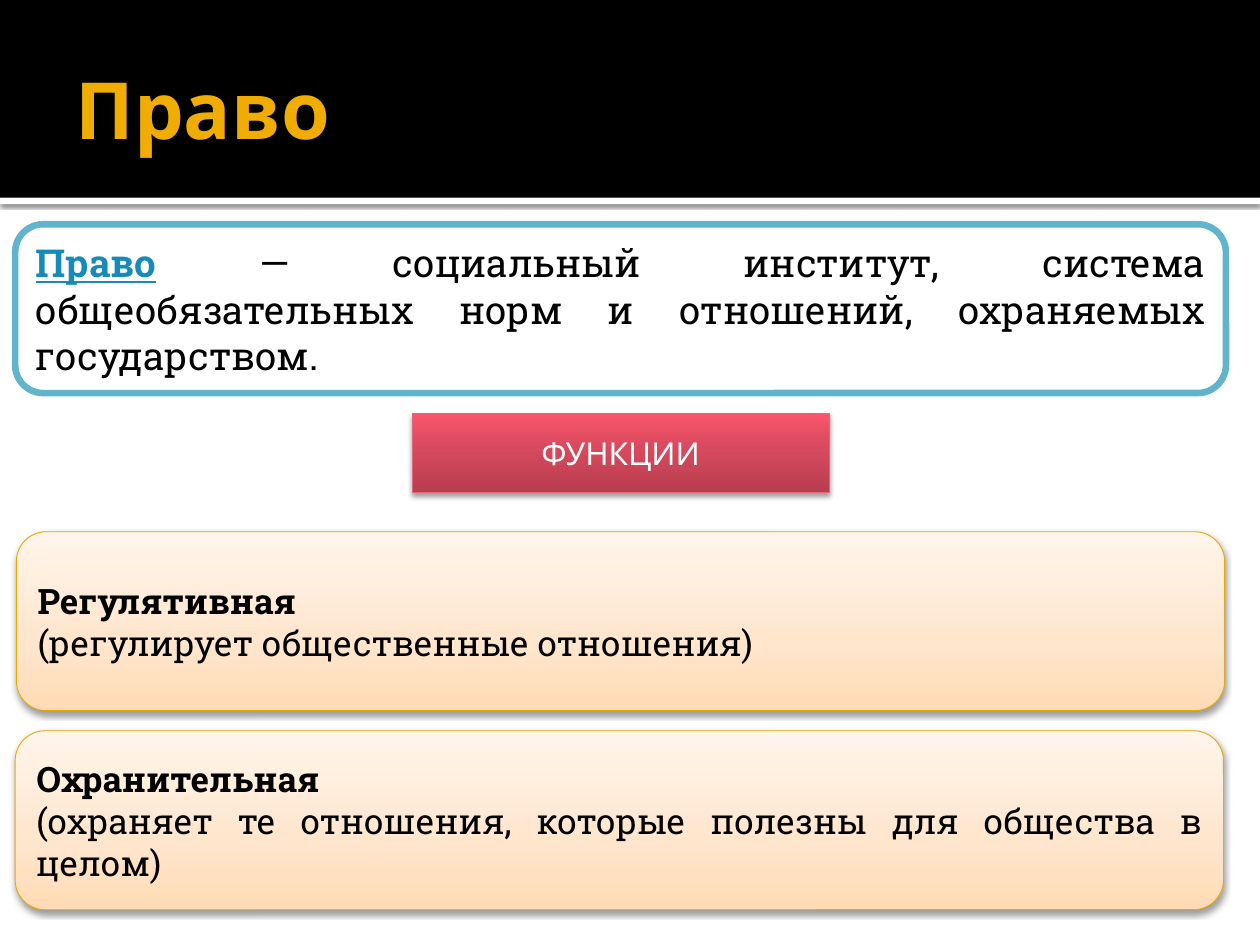
from dataclasses import dataclass

from lxml import etree
from pptx import Presentation
from pptx.dml.color import RGBColor
from pptx.enum.shapes import MSO_SHAPE
from pptx.enum.text import MSO_ANCHOR, MSO_AUTO_SIZE, PP_ALIGN
from pptx.oxml.ns import qn
from pptx.util import Inches, Pt

RECT, ROUNDED = MSO_SHAPE.RECTANGLE, MSO_SHAPE.ROUNDED_RECTANGLE
LEFT, CENTER, JUSTIFY = PP_ALIGN.LEFT, PP_ALIGN.CENTER, PP_ALIGN.JUSTIFY
MIDDLE, NO_FIT = MSO_ANCHOR.MIDDLE, MSO_AUTO_SIZE.NONE
TITLE_ONLY = 5


@dataclass(frozen=True)
class Theme:
    heading: str = "Cabin"
    body: str = "Roboto Slab"
    title_size: float = 45
    definition_size: float = 22
    card_size: float = 20
    label_size: float = 18
    black: str = "000000"
    white: str = "FFFFFF"
    gold: str = "F0AD00"
    term: str = "168BBA"
    frame: str = "60B5CC"
    label_line: str = "E46778"
    card_line: str = "EBA900"
    # Gradient stops run from the bottom edge to the top
    label_fill: tuple = ((0, "B73E4F"), (55, "D7495D"), (100, "FA556C"))
    card_fill: tuple = ((0, "FFDBB5"), (35, "FFE5CB"), (100, "FFF5EB"))


T = Theme()


def set_gradient(sp, stops):
    sp.fill.gradient()
    sp.fill.gradient_angle = 90
    gs_list = sp.element.spPr.find(".//" + qn("a:gsLst"))
    for old in list(gs_list):
        gs_list.remove(old)
    for pos, color in stops:
        gs = etree.SubElement(gs_list, qn("a:gs"), pos=str(pos * 1000))
        etree.SubElement(gs, qn("a:srgbClr"), val=color)


def add_shadow(sp, alpha, blur, dist):
    effects = sp.element.spPr.find(qn("a:effectLst"))
    shadow = etree.SubElement(
        effects, qn("a:outerShdw"), blurRad=str(Pt(blur)), dist=str(Pt(dist)),
        dir="5400000", algn="ctr", rotWithShape="0")
    color = etree.SubElement(shadow, qn("a:srgbClr"), val=T.black)
    etree.SubElement(color, qn("a:alpha"), val=str(alpha * 1000))


def add_box(s, kind, box, fill, line=None, width=0.5, shadow=None):
    sp = s.shapes.add_shape(kind, *map(Inches, box))
    if isinstance(fill, tuple):
        set_gradient(sp, fill)
    else:
        sp.fill.solid()
        sp.fill.fore_color.rgb = RGBColor.from_string(fill)
    if line:
        sp.line.color.rgb = RGBColor.from_string(line)
        sp.line.width = Pt(width)
    else:
        sp.line.fill.background()
    sp.shadow.inherit = False
    if shadow:
        add_shadow(sp, *shadow)
    return sp


def write(sp, paragraphs, font, size, align):
    """Each paragraph is a list of (text, colour, bold, underlined) runs."""
    tf = sp.text_frame
    tf.word_wrap = True
    tf.vertical_anchor = MIDDLE
    for i, runs in enumerate(paragraphs):
        p = tf.add_paragraph() if i else tf.paragraphs[0]
        p.alignment = align
        for text, color, bold, underlined in runs:
            r = p.add_run()
            r.text = text
            r.font.name, r.font.size = font, Pt(size)
            r.font.bold, r.font.underline = bold, underlined
            r.font.color.rgb = RGBColor.from_string(color)


def header(s, box, text):
    x, y, w, h = box
    # Black band with a thin white strip under it
    add_box(s, RECT, (x, y + h, w, 0.05), T.white, shadow=(60, 2.5, 0.8))
    band = add_box(s, RECT, box, T.black)
    # Title in front of the band
    title = s.shapes.title
    band.element.addnext(title.element)
    title.left, title.top = Inches(x + 0.05 * w), Inches(y + 0.17)
    title.width, title.height = Inches(0.9 * w), Inches(1.37)
    write(title, [[(text, T.gold, True, False)]], T.heading, T.title_size, LEFT)
    tf = title.text_frame
    tf.auto_size = NO_FIT
    tf.margin_left = Inches(0.1)
    tf.margin_right = tf.margin_top = tf.margin_bottom = Inches(0.05)


def definition(s, box, term, meaning):
    sp = add_box(s, ROUNDED, box, T.white, T.frame, 3.78)
    runs = [(term, T.term, True, True), (meaning, T.black, False, False)]
    write(sp, [runs], T.body, T.definition_size, JUSTIFY)


def label(s, box, text):
    sp = add_box(s, RECT, box, T.label_fill, T.label_line, shadow=(38, 3.1, 2))
    write(sp, [[(text, T.white, False, False)]], T.heading, T.label_size, CENTER)


def function_card(s, box, name, detail):
    sp = add_box(s, ROUNDED, box, T.card_fill, T.card_line, shadow=(38, 3.5, 2))
    lines = [[(name, T.black, True, False)], [(detail, T.black, False, False)]]
    write(sp, lines, T.body, T.card_size, JUSTIFY)


def main():
    prs = Presentation()
    prs.slide_width, prs.slide_height = Inches(10), Inches(7.5)
    s = prs.slides.add_slide(prs.slide_layouts[TITLE_ONLY])

    header(s, (0, 0, 10, 1.57), "Право")
    definition(s, (0.12, 1.78, 9.61, 1.34), "Право",
               " — социальный институт, система общеобязательных норм "
               "и отношений, охраняемых государством.")
    label(s, (3.27, 3.28, 3.31, 0.63), "ФУНКЦИИ")
    function_card(s, (0.13, 4.22, 9.59, 1.42), "Регулятивная",
                  "(регулирует общественные отношения)")
    function_card(s, (0.12, 5.8, 9.59, 1.42), "Охранительная",
                  "(охраняет те отношения, которые полезны для общества в целом)")

    prs.save("out.pptx")


if __name__ == "__main__":
    main()
